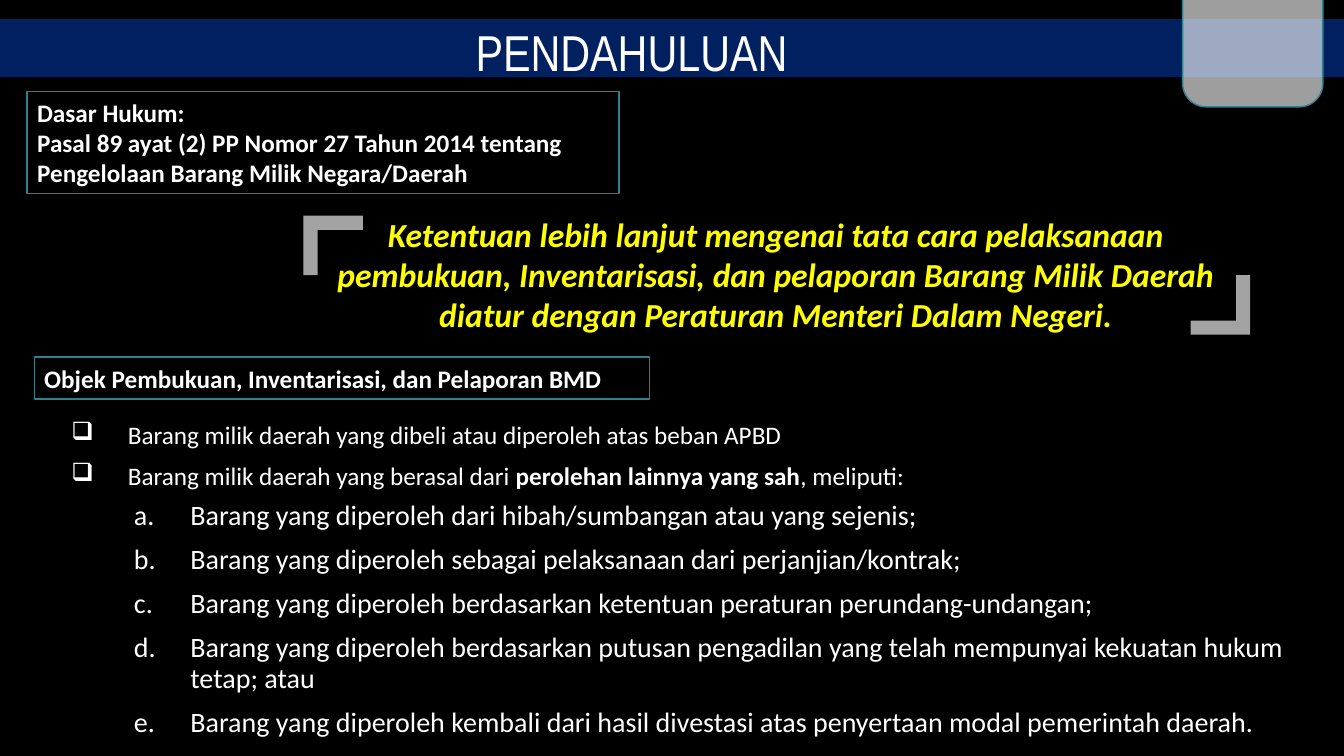
from lxml import etree
from pptx import Presentation
from pptx import util as u
from pptx.dml.color import RGBColor
from pptx.enum import shapes, text
from pptx.oxml import ns

COLORS = {"black": "000000", "white": "FFFFFF", "navy": "002060",
          "teal": "30818C", "yellow": "FFFF00"}
TITLE = "PENDAHULUAN"
LEGAL_BASIS = ["Dasar Hukum:",
               "Pasal 89 ayat (2) PP Nomor 27 Tahun 2014 tentang "
               "Pengelolaan Barang Milik Negara/Daerah"]
QUOTE = ("Ketentuan lebih lanjut mengenai tata cara pelaksanaan pembukuan, "
         "Inventarisasi, dan pelaporan Barang Milik Daerah diatur dengan "
         "Peraturan Menteri Dalam Negeri.")
OBJECT_HEADING = "Objek Pembukuan, Inventarisasi, dan Pelaporan BMD"
SOURCES = [
    [("Barang milik daerah yang dibeli atau diperoleh atas beban APBD", False)],
    [("Barang milik daerah yang berasal dari ", False),
     ("perolehan lainnya yang sah", True), (", meliputi:", False)],
]
OTHER_SOURCES = [[(line, False)] for line in (
    "Barang yang diperoleh dari hibah/sumbangan atau yang sejenis;",
    "Barang yang diperoleh sebagai pelaksanaan dari perjanjian/kontrak;",
    "Barang yang diperoleh berdasarkan ketentuan peraturan perundang-undangan;",
    "Barang yang diperoleh berdasarkan putusan pengadilan yang telah mempunyai "
    "kekuatan hukum tetap; atau",
    "Barang yang diperoleh kembali dari hasil divestasi atas penyertaan modal "
    "pemerintah daerah.",
)]
ARM, THICK = 0.59, 0.14
BRACKETS = [((3.01, 2.14), 1), ((12.4, 3.32), -1)]


def rgb(name):
    return RGBColor.from_string(COLORS[name])


def paint(shape, color, opacity=100, line=None):
    shape.shadow.inherit = False
    shape.fill.solid()
    shape.fill.fore_color.rgb = rgb(color)
    if opacity < 100:
        solid = shape.fill._xPr.find(ns.qn("a:solidFill"))
        etree.SubElement(solid[0], ns.qn("a:alpha"), val=str(opacity * 1000))
    if line:
        shape.line.color.rgb = rgb(line)
        shape.line.width = u.Pt(1)
    else:
        shape.line.fill.background()


def add_block(slide, kind, place, color, opacity=100):
    block = slide.shapes.add_shape(kind, *map(u.Inches, place))
    paint(block, color, opacity, "navy" if color == "navy" else "teal")
    return block


def add_box(slide, place):
    box = slide.shapes.add_textbox(*map(u.Inches, place))
    box.text_frame.word_wrap = True
    return box


def style(font, size, color="white", face="Calibri", bold=False, italic=False):
    font.size, font.name, font.bold, font.italic = u.Pt(size), face, bold, italic
    font.color.rgb = rgb(color)


def write(shape, lines, size, align, middle=True, **look):
    frame = shape.text_frame
    frame.text = "\n".join(lines)
    frame.word_wrap = True
    frame.vertical_anchor = text.MSO_ANCHOR.MIDDLE if middle else text.MSO_ANCHOR.TOP
    for paragraph in frame.paragraphs:
        paragraph.alignment = align
        for run in paragraph.runs:
            style(run.font, size, **look)


def write_list(box, items, size, bullet, **marker):
    frame = box.text_frame
    for index, pieces in enumerate(items):
        paragraph = frame.add_paragraph() if index else frame.paragraphs[0]
        props = paragraph._p.get_or_add_pPr()
        props.set("marL", str(u.Inches(0.56)))
        props.set("indent", str(-u.Inches(0.56)))
        etree.SubElement(props, ns.qn(bullet), **marker)
        paragraph.line_spacing = 0.9
        paragraph.space_before = u.Pt(10 if index else 0)
        for words, bold in pieces:
            run = paragraph.add_run()
            run.text = words
            style(run.font, size, bold=bold)


def add_bracket(slide, corner, way):
    outline = [(ARM, 0), (ARM, THICK), (THICK, THICK), (THICK, ARM), (0, ARM), (0, 0)]
    points = [(u.Inches(corner[0] + way * x), u.Inches(corner[1] + way * y))
              for x, y in outline]
    builder = slide.shapes.build_freeform(*points[-1])
    builder.add_line_segments(points[:-1], close=True)
    paint(builder.convert_to_shape(), "white", 64)


def main():
    """Build the introduction slide and save it."""
    deck = Presentation()
    deck.slide_width, deck.slide_height = u.Inches(13.33), u.Inches(7.5)
    slide = deck.slides.add_slide(deck.slide_layouts[6])
    slide.background.fill.solid()
    slide.background.fill.fore_color.rgb = rgb("black")
    rect, rounded = shapes.MSO_SHAPE.RECTANGLE, shapes.MSO_SHAPE.ROUNDED_RECTANGLE
    left, center = text.PP_ALIGN.LEFT, text.PP_ALIGN.CENTER

    add_block(slide, rect, (-0.09, 0.2, 13.65, 0.56), "navy")
    add_block(slide, rounded, (11.73, -1.42, 1.39, 2.48), "white", 62)
    title = add_box(slide, (1.72, 0.16, 9.09, 0.71))
    write(title, [TITLE], 36, center, middle=False, face="Arial Narrow")

    legal_basis = add_block(slide, rect, (0.27, 0.91, 5.87, 1.01), "black", 24)
    write(legal_basis, LEGAL_BASIS, 18, left, bold=True)

    quote = add_box(slide, (3.08, 2.13, 9.23, 1.18))
    write(quote, [QUOTE], 24, center, color="yellow", bold=True, italic=True)
    for corner, way in BRACKETS:
        add_bracket(slide, corner, way)

    heading = add_block(slide, rect, (0.34, 3.54, 6.1, 0.42), "black", 24)
    write(heading, [OBJECT_HEADING], 18, left, bold=True)

    sources = add_box(slide, (0.61, 4.14, 10.94, 0.93))
    write_list(sources, SOURCES, 18, "a:buChar", char="❑")
    other_sources = add_box(slide, (1.23, 4.92, 11.62, 2.55))
    write_list(other_sources, OTHER_SOURCES, 20, "a:buAutoNum", type="alphaLcPeriod")
    deck.save("out.pptx")


if __name__ == "__main__":
    main()
